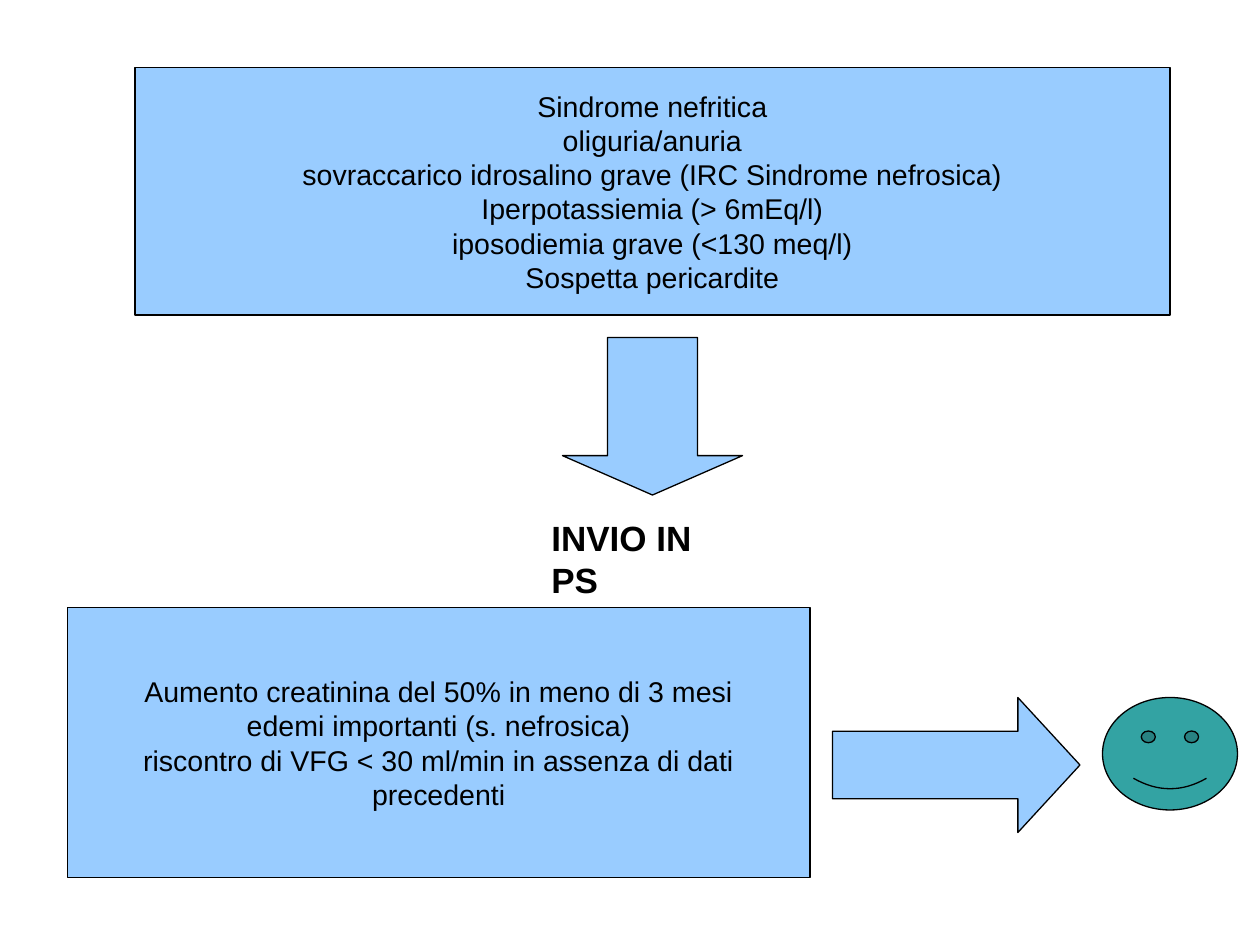
from pptx import Presentation
from pptx.dml.color import RGBColor
from pptx.enum.shapes import MSO_SHAPE as Shape
from pptx.enum.text import MSO_ANCHOR as Anchor, PP_ALIGN as Align
from pptx.util import Inches, Pt

COLORS = {"blue": "99CCFF", "teal": "33A3A3", "ink": "000000"}
FONT = "Arial"
WIDTH, HEIGHT = 10, 7.5
COLUMNS, ROWS = 56, 42

URGENT_SIGNS = [
    "Sindrome nefritica",
    "oliguria/anuria",
    "sovraccarico idrosalino grave (IRC Sindrome nefrosica)",
    "Iperpotassiemia (> 6mEq/l)",
    "iposodiemia grave (<130 meq/l)",
    "Sospetta pericardite",
]
REFERRAL_SIGNS = [
    "Aumento creatinina del 50% in meno di 3 mesi",
    "edemi importanti (s. nefrosica)",
    "riscontro di VFG < 30 ml/min in assenza di dati precedenti",
]
DESTINATION = ["INVIO IN PS"]

SHAPES = [
    (Shape.RECTANGLE, (6, 3, 46, 11), "blue", (), URGENT_SIGNS),
    (Shape.DOWN_ARROW, (25, 15, 8, 7), "blue", (0.5, 0.25), []),
    (Shape.RECTANGLE, (3, 27, 33, 12), "blue", (), REFERRAL_SIGNS),
    (Shape.RIGHT_ARROW, (37, 31, 11, 6), "blue", (0.5, 0.46), []),
    (Shape.SMILEY_FACE, (49, 31, 6, 5), "teal", (), []),
]
DESTINATION_CELL = (24, 22.75, 9.7, 4.1)


def place(cell):
    column, row, columns, rows = cell
    return (
        Inches(column * WIDTH / COLUMNS),
        Inches(row * HEIGHT / ROWS),
        Inches(columns * WIDTH / COLUMNS),
        Inches(rows * HEIGHT / ROWS),
    )


def write(frame, lines, size, align, bold=False):
    frame.margin_left = frame.margin_right = Inches(0.09)
    frame.margin_top = frame.margin_bottom = Inches(0.04)
    for index, line in enumerate(lines):
        para = frame.add_paragraph() if index else frame.paragraphs[0]
        para.text = line
        para.alignment = align
        para.font.name = FONT
        para.font.size = Pt(size)
        para.font.bold = bold
        para.font.color.rgb = RGBColor.from_string(COLORS["ink"])


def add_figure(page, kind, cell, color, adjustments, lines):
    figure = page.shapes.add_shape(kind, *place(cell))
    figure.shadow.inherit = False
    figure.fill.solid()
    figure.fill.fore_color.rgb = RGBColor.from_string(COLORS[color])
    figure.line.color.rgb = RGBColor.from_string(COLORS["ink"])
    figure.line.width = Pt(0)
    for index, value in enumerate(adjustments):
        figure.adjustments[index] = value
    if lines:
        figure.text_frame.word_wrap = True
        figure.text_frame.vertical_anchor = Anchor.MIDDLE
        write(figure.text_frame, lines, 16.3, Align.CENTER)


def main():
    deck = Presentation()
    deck.slide_width, deck.slide_height = Inches(WIDTH), Inches(HEIGHT)
    page = deck.slides.add_slide(deck.slide_layouts[6])
    for figure in SHAPES:
        add_figure(page, *figure)
    label = page.shapes.add_textbox(*place(DESTINATION_CELL))
    label.text_frame.word_wrap = False
    write(label.text_frame, DESTINATION, 20, Align.LEFT, bold=True)
    deck.save("out.pptx")


if __name__ == "__main__":
    main()
